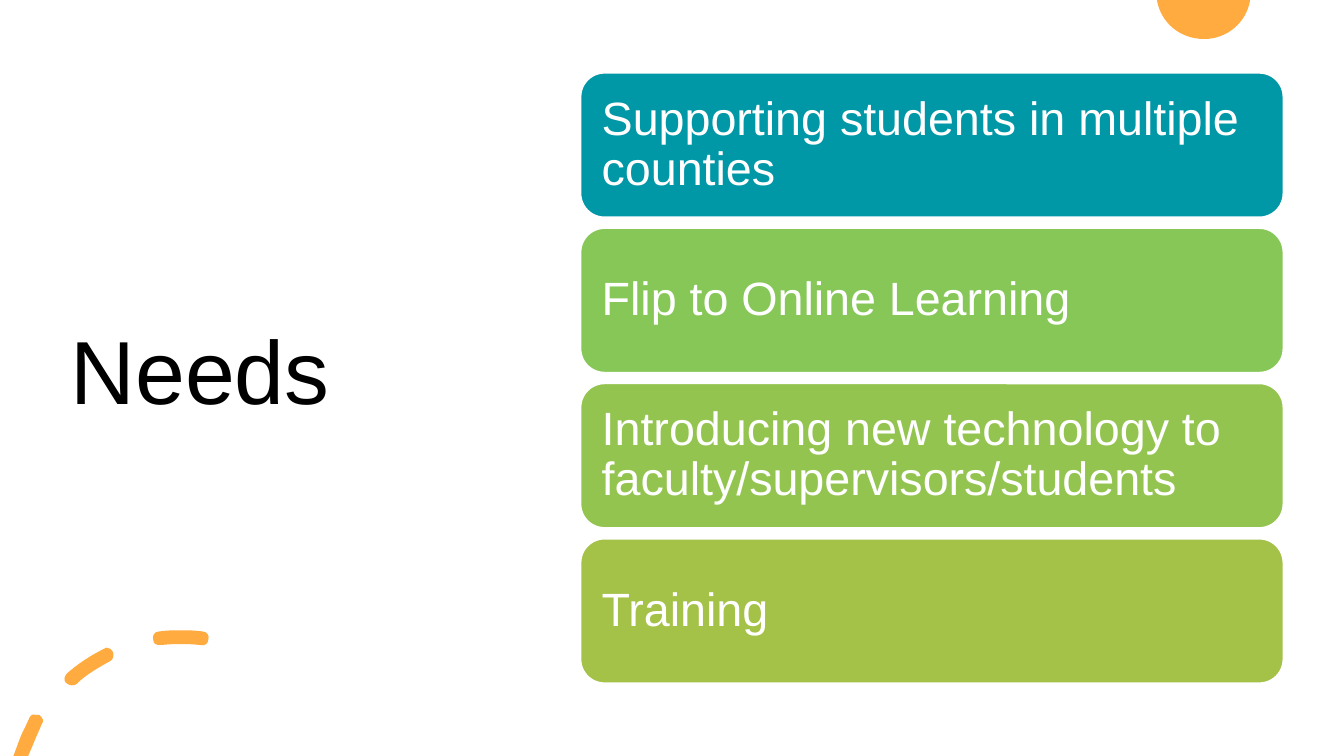
import pptx
import pptx.util
import pptx.dml.color
import pptx.enum.shapes
import pptx.enum.text
import pptx.oxml.ns
import lxml.etree

Pt = pptx.util.Pt
RGB = pptx.dml.color.RGBColor.from_string
qn = pptx.oxml.ns.qn

TITLE = "Needs"
NEEDS = [
    ("Supporting students in multiple counties", "0097A7"),
    ("Flip to Online Learning", "86C758"),
    ("Introducing new technology to faculty/supervisors/students", "94C450"),
    ("Training", "A4C148"),
]
THEME = {
    "font": "Arial",
    "title_size": 48,
    "need_size": 25,
    "title_color": "000000",
    "need_color": "FFFFFF",
    "card_line": "FFFFFF",
    "accent": "FFAB40",
}
SUN = [[
    (619.9, 0), (669.6, 0), (669.6, 0.7),
    (667.4, 12.2, 657.4, 20.9, 645.1, 20.9),
    (632.2, 20.9, 622.1, 12.2, 619.9, 0.7),
]]
DASHES = [
    [
        (19.4, 383), (18, 382.3, 16.6, 383, 15.8, 384.5),
        (14.4, 388.1, 12.2, 391.7, 10.8, 395.3), (7.2, 405), (15.1, 405),
        (18, 398.2), (19.4, 394.6, 20.9, 391.7, 22.3, 388.1),
        (23.8, 386.6, 23, 384.5, 20.9, 383),
        (20.9, 383, 20.2, 383, 19.4, 383),
    ],
    [
        (56.9, 347), (56.2, 347, 56.2, 347, 55.4, 347.8),
        (48.2, 351.4, 41.8, 355.7, 36, 360.7),
        (34.6, 362.2, 33.8, 364.3, 35.3, 365.8),
        (36, 366.5, 37.4, 367.2, 38.2, 367.2), (38.2, 367.2),
        (39.6, 367.2, 40.3, 367.2, 41, 366.5),
        (46.1, 361.4, 52.6, 357.8, 59, 354.2),
        (60.5, 353.5, 61.2, 351.4, 60.5, 349.2),
        (59.8, 347.8, 58.3, 347, 56.9, 347),
    ],
    [
        (96.5, 337.7), (92.9, 337.7, 89.3, 337.7, 85, 338.4),
        (82.8, 338.4, 81.4, 340.6, 82.1, 342.7),
        (82.1, 344.9, 83.5, 345.6, 85.7, 345.6),
        (85.7, 345.6, 85.7, 345.6, 86.4, 345.6),
        (92.9, 344.9, 100.8, 344.9, 107.3, 345.6),
        (109.4, 346.3, 111.6, 344.9, 111.6, 342.7),
        (112.3, 340.6, 110.9, 338.4, 108.7, 338.4),
        (108.7, 338.4, 108.7, 338.4, 108.7, 338.4),
        (104.4, 337.7, 100.8, 337.7, 96.5, 337.7),
    ],
]
CARD_LEFT, CARD_TOP, CARD_WIDTH, CARD_HEIGHT, CARD_GAP = 311, 39, 376.6, 77.5, 5.7


def apply(target, values):
    for name, value in values.items():
        setattr(target, name, value)


def bend(ornament, outlines):
    segments = [segment for outline in outlines for segment in outline[1:]]
    lines = list(ornament._element.iter(qn("a:lnTo")))
    for line, segment in zip(lines, segments):
        if len(segment) == 2:
            continue
        curve = lxml.etree.Element(qn("a:cubicBezTo"))
        for x, y in zip(segment[::2], segment[1::2]):
            point = lxml.etree.SubElement(curve, qn("a:pt"))
            point.set("x", str(Pt(x) - ornament.left))
            point.set("y", str(Pt(y) - ornament.top))
        line.getparent().replace(line, curve)


def add_ornament(slide, outlines):
    builder = None
    for outline in outlines:
        start, *ends = [tuple(Pt(value) for value in part[-2:]) for part in outline]
        if builder is None:
            builder = slide.shapes.build_freeform(*start)
        else:
            builder.move_to(*start)
        builder.add_line_segments(ends, close=True)
    ornament = builder.convert_to_shape()
    bend(ornament, outlines)
    ornament.shadow.inherit = False
    ornament.fill.solid()
    ornament.fill.fore_color.rgb = RGB(THEME["accent"])
    ornament.line.fill.background()


def write(shape, text, role, inset_x, inset_y):
    frame = shape.text_frame
    apply(frame, {
        "text": text,
        "word_wrap": True,
        "auto_size": pptx.enum.text.MSO_AUTO_SIZE.NONE,
        "vertical_anchor": pptx.enum.text.MSO_ANCHOR.MIDDLE,
        "margin_left": Pt(inset_x),
        "margin_right": Pt(inset_x),
        "margin_top": Pt(inset_y),
        "margin_bottom": Pt(inset_y),
    })
    paragraph = frame.paragraphs[0]
    apply(paragraph, {
        "alignment": pptx.enum.text.PP_ALIGN.LEFT,
        "line_spacing": 0.9,
        "space_before": Pt(0),
    })
    font = paragraph.runs[0].font
    apply(font, {"name": THEME["font"], "size": Pt(THEME[role + "_size"])})
    font.color.rgb = RGB(THEME[role + "_color"])


def add_card(slide, index, need, color):
    top = CARD_TOP + index * (CARD_HEIGHT + CARD_GAP)
    card = slide.shapes.add_shape(
        pptx.enum.shapes.MSO_SHAPE.ROUNDED_RECTANGLE,
        Pt(CARD_LEFT), Pt(top), Pt(CARD_WIDTH), Pt(CARD_HEIGHT),
    )
    card.shadow.inherit = False
    card.fill.solid()
    card.fill.fore_color.rgb = RGB(color)
    card.line.color.rgb = RGB(THEME["card_line"])
    card.line.width = Pt(1)
    write(card, need, "need", 7.6, 7.2)


def main():
    deck = pptx.Presentation()
    apply(deck, {"slide_width": Pt(720), "slide_height": Pt(405)})
    slide = deck.slides.add_slide(deck.slide_layouts[5])
    title = slide.shapes.title
    apply(title, {"left": Pt(32.4), "top": Pt(89.6), "width": Pt(268), "height": Pt(223)})
    write(title, TITLE, "title", 5.4, 2.7)
    for outlines in (SUN, DASHES):
        add_ornament(slide, outlines)
    for index, (need, color) in enumerate(NEEDS):
        add_card(slide, index, need, color)
    deck.save("out.pptx")


if __name__ == "__main__":
    main()
